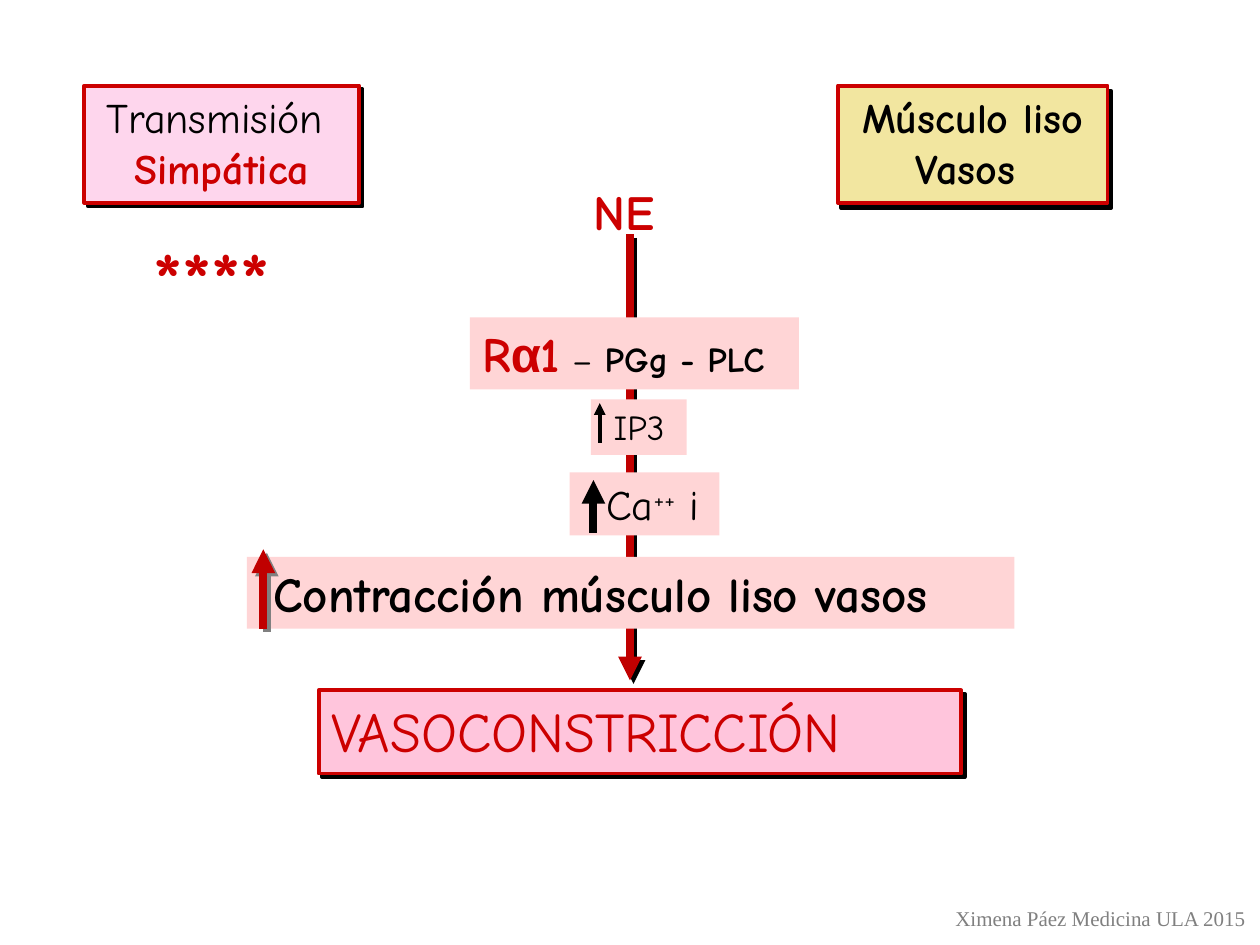
"""Build the slide on sympathetic transmission and vasoconstriction."""
from lxml import etree
from pptx import Presentation
from pptx.dml.color import RGBColor
from pptx.enum.shapes import MSO_CONNECTOR, MSO_SHAPE
from pptx.enum.text import MSO_ANCHOR, MSO_AUTO_SIZE, PP_ALIGN
from pptx.oxml.ns import qn
from pptx.util import Inches, Pt

RECT, LINE = MSO_SHAPE.RECTANGLE, MSO_CONNECTOR.STRAIGHT
TOP, GROW = MSO_ANCHOR.TOP, MSO_AUTO_SIZE.SHAPE_TO_FIT_TEXT
LEFT, MID = PP_ALIGN.LEFT, PP_ALIGN.CENTER
COMIC, ARIAL, TIMES = "Comic Neue", "Arial", "Times New Roman"
RED, DARK, BLACK, GRAY, ROSE = "CC0000", "C00000", "000000", "808080", "FFD5D6"

deck = Presentation()
deck.slide_width, deck.slide_height = Inches(10), Inches(7.5)
COL, ROW = deck.slide_width / 100, deck.slide_height / 75
slide = deck.slides.add_slide(deck.slide_layouts[6])
shapes = slide.shapes


def rgb(code):
    """Turn a hex string into a colour."""
    return RGBColor.from_string(code)


def shade(parent, color=None, dist=2.8, turn=45):
    """Give an effect list to a parent, empty when there is no colour."""
    fx = etree.SubElement(parent, qn("a:effectLst"))
    if color:
        cast = etree.SubElement(fx, qn("a:outerShdw"), dist=str(Pt(dist)),
                                dir=str(turn * 60000), algn="ctr", rotWithShape="0")
        etree.SubElement(cast, qn("a:srgbClr"), val=color)
    return fx


lines = [
    (50, 18.6, 54, DARK, 4.5, "a:tailEnd", BLACK),
    (47.6, 32, 35.2, BLACK, 2.25, "a:headEnd", None),
    (20.9, 43.6, 49.9, DARK, 4.5, "a:headEnd", GRAY),
    (47.1, 38.1, 42.3, BLACK, 4.5, "a:headEnd", None),
]

# fmt: off
boxes = [
    ((66.5, 6.8, 21.4, 9.3), "F2E6A0", (3.6, 56), MID, 0.1,
     [[("Músculo liso", 24, BLACK, True, COMIC)], [("Vasos ", 24, BLACK, True, COMIC)]]),
    ((6.7, 6.8, 21.8, 9.3), "FED6ED", (2.8, 45), MID, 0.1,
     [[("Transmisión ", 24, BLACK, False, COMIC)], [("Simpática", 24, RED, True, COMIC)]]),
    ((8.3, 17.8, 17, 8.4), None, None, MID, 0.1, [[("****", 44, RED, True, COMIC)]]),
    ((46.1, 13.9, 7.6, 5.7), None, None, LEFT, 0.1, [[("NE", 28, RED, True, COMIC)]]),
    ((37.3, 25.2, 26.1, 5.7), ROSE, None, LEFT, 0.1,
     [[("R", 28, RED, True, COMIC), ("α", 28, RED, True, ARIAL), ("1", 28, RED, True, COMIC),
       (" ", 20, "FF0066", False, COMIC), ("– ", 20, BLACK, False, COMIC),
       ("PGg - PLC", 20, BLACK, True, COMIC)]]),
    ((46.9, 31.7, 7.6, 4.4), ROSE, None, LEFT, 0.18, [[("IP3", 20, BLACK, False, COMIC)]]),
    ((19.6, 44.2, 60.9, 5.7), ROSE, None, LEFT, 0.21,
     [[("Contracción músculo liso vasos", 28, BLACK, True, COMIC)]]),
    ((45.2, 37.5, 11.9, 5), ROSE, None, LEFT, 0.29,
     [[("Ca", 24, BLACK, False, COMIC), ("++", 24, BLACK, False, COMIC),
       (" i", 24, BLACK, False, COMIC)]]),
    ((25.3, 54.8, 51, 6.6), "FFC5DC", (2.8, 45), LEFT, 0.1,
     [[("VASOCONSTRICCIÓN", 32, RED, False, COMIC)]]),
    ((74.7, 71.4, 25.3, 3), None, None, MID, 0.1,
     [[("Ximena Páez Medicina ULA 2015", 12, GRAY, False, TIMES)]]),
]
# fmt: on

arrows = []
for x, start, end, color, width, tip, cast in lines:
    arrow = shapes.add_connector(LINE, int(x * COL), int(start * ROW), int(x * COL), int(end * ROW))
    arrow.line.color.rgb = rgb(color)
    arrow.line.width = Pt(width)
    etree.SubElement(arrow.line._get_or_add_ln(), qn(tip), type="triangle")
    shade(arrow._element.spPr, cast)
    arrows.append(arrow)

for (x, y, w, h), fill, cast, align, inset, rows in boxes:
    place = int(x * COL), int(y * ROW), int(w * COL), int(h * ROW)
    if fill:
        box = shapes.add_shape(RECT, *place)
        box.fill.solid()
        box.fill.fore_color.rgb = rgb(fill)
        if cast:
            box.line.color.rgb = rgb(RED)
            box.line.width = Pt(2.25)
            shade(box._element.spPr, BLACK, *cast)
        else:
            box.line.fill.background()
            box.shadow.inherit = False
    else:
        box = shapes.add_textbox(*place)
    frame = box.text_frame
    frame.word_wrap = rows[0][0][0] == "****"
    frame.auto_size, frame.vertical_anchor = GROW, TOP
    frame.margin_left = Inches(inset)
    for i, row in enumerate(rows):
        para = frame.add_paragraph() if i else frame.paragraphs[0]
        para.alignment = align
        for words, size, color, bold, face in row:
            run = para.add_run()
            run.text = words
            font = run.font
            font.size, font.bold, font.name = Pt(size), bold, face
            font.color.rgb = rgb(color)
            props = run._r.get_or_add_rPr()
            if words == "++":
                props.set("baseline", "30000")
            if words == "****":
                props.find(qn("a:solidFill")).addnext(shade(props, BLACK))

for arrow in arrows[1:]:
    shapes._spTree.append(arrow._element)

deck.save("out.pptx")
